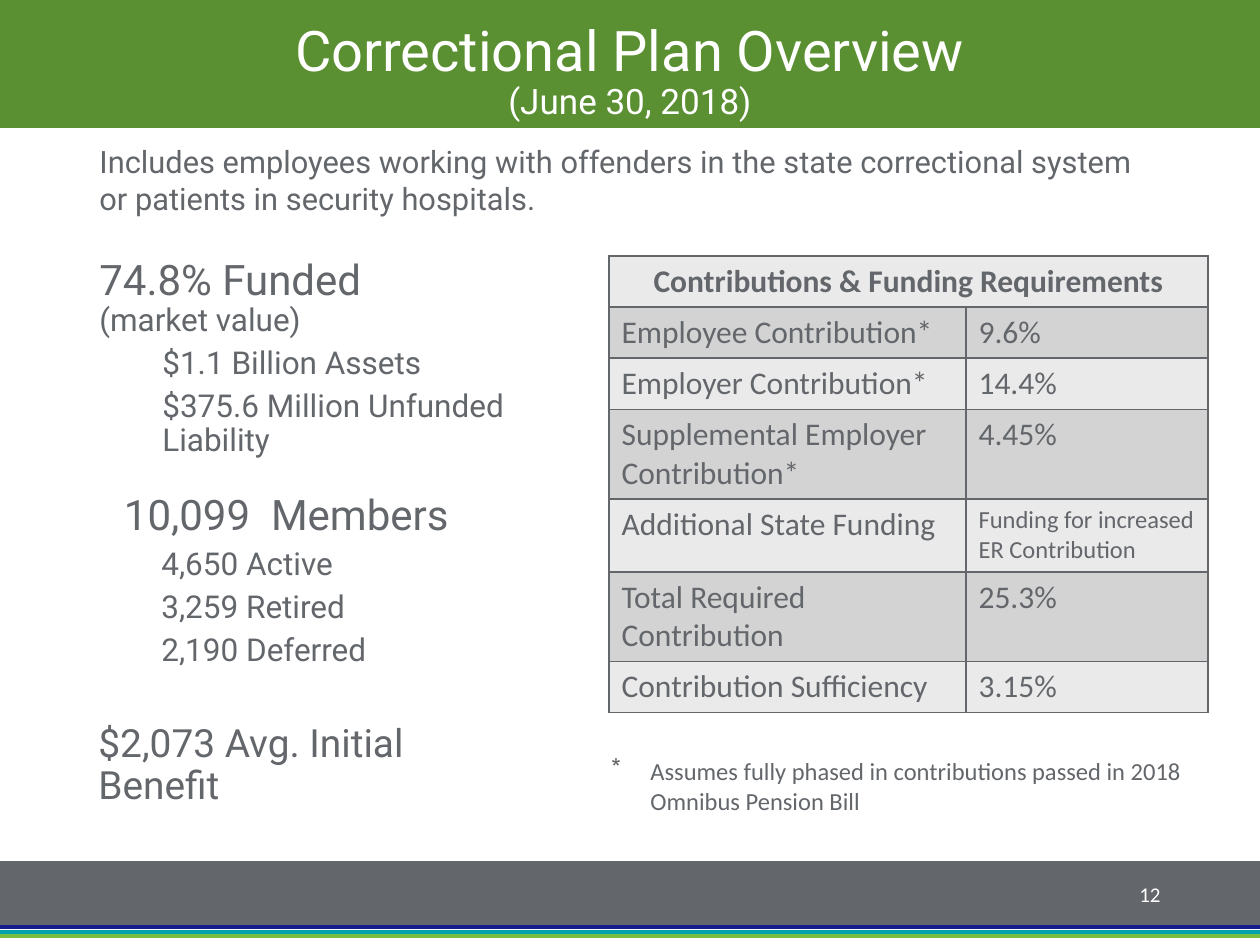
from lxml.etree import SubElement
from pptx import Presentation
from pptx.dml.color import RGBColor
from pptx.enum.shapes import MSO_CONNECTOR, MSO_SHAPE
from pptx.enum.text import MSO_ANCHOR, PP_ALIGN
from pptx.oxml import parse_xml
from pptx.oxml.ns import nsdecls, qn
from pptx.util import Emu, Pt

EMU_PER_PX = 914400 / 126
GRAY, WHITE, GREEN = "63666A", "FFFFFF", "5A8F32"
hex_color = RGBColor.from_string


def px(*lengths):
    """Turn pixel lengths into a list of EMU lengths."""
    return [Emu(round(length * EMU_PER_PX)) for length in lengths]


def write_text(shape, lines, font="Roboto", color=GRAY, align=None,
               anchor=MSO_ANCHOR.TOP, spacing=0.9):
    """Write (text, sizes of its runs, indent level, points before) lines."""
    frame = shape.text_frame
    frame.word_wrap = True
    frame.vertical_anchor = anchor
    frame.text = "\n".join(line[0] for line in lines)
    for paragraph, (_, sizes, level, before) in zip(frame.paragraphs, lines):
        paragraph.level = level
        paragraph.alignment = align
        paragraph.line_spacing = spacing
        paragraph.space_before = Pt(before)
        if level:
            properties = paragraph._p.get_or_add_pPr()
            properties.set("marL", str(px(63)[0]))
            properties.set("indent", "0")
        for run, size in zip(paragraph.runs, sizes):
            run.font.size = Pt(size)
            run.font.name = font
            run.font.color.rgb = hex_color(color)


presentation = Presentation()
presentation.slide_width, presentation.slide_height = px(1260, 945)
slide = presentation.slides.add_slide(presentation.slide_layouts[6])
shapes = slide.shapes

# Footer, stripe background and title band
for top, height, color in [(861, 84, GRAY), (927, 18, WHITE), (0, 128, GREEN)]:
    band = shapes.add_shape(MSO_SHAPE.RECTANGLE, *px(0, top, 1260, height))
    band.shadow.inherit = False
    band.fill.solid()
    band.fill.fore_color.rgb = hex_color(color)
    band.line.fill.background()
title = band
write_text(title, [("Correctional Plan Overview\v(June 30, 2018)", [32, 20], 0, 0)],
           color=WHITE, align=PP_ALIGN.CENTER, anchor=MSO_ANCHOR.BOTTOM)

for top, color in [(927, "171C8F"), (932, "00A3AD"), (936, "78BE43")]:
    stripe = shapes.add_connector(MSO_CONNECTOR.STRAIGHT, *px(0, top, 1260, top))
    stripe.line.color.rgb = hex_color(color)
    stripe.line.width = Pt(2.5)
    SubElement(stripe._element.spPr, qn("a:effectLst"))

# Contributions table
rows = [
    ("Contributions & Funding Requirements", "", 51),
    ("Employee Contribution*", "9.6%", 51),
    ("Employer Contribution*", "14.4%", 51),
    ("Supplemental Employer Contribution*", "4.45%", 89),
    ("Additional State Funding", "Funding for increased ER Contribution", 73),
    ("Total Required Contribution", "25.3%", 89),
    ("Contribution Sufficiency", "3.15%", 51),
]
table = shapes.add_table(len(rows), 2, *px(609, 256, 599, 455)).table
for column, width in zip(table.columns, px(357, 242)):
    column.width = width
for row_index, (*texts, height) in enumerate(rows):
    table.rows[row_index].height = px(height)[0]
    for column_index, text in enumerate(texts):
        cell = table.cell(row_index, column_index)
        for side in ("lnL", "lnR", "lnT", "lnB"):
            cell._tc.get_or_add_tcPr().append(parse_xml(
                f'<a:{side} {nsdecls("a")} w="12700"><a:solidFill>'
                f'<a:srgbClr val="{GRAY}"/></a:solidFill></a:{side}>'))
        cell.fill.solid()
        cell.fill.fore_color.rgb = hex_color("D3D3D4" if row_index % 2 else "EAEAEB")
        cell.text_frame.text = text
        paragraph = cell.text_frame.paragraphs[0]
        if row_index == 0:
            paragraph.alignment = PP_ALIGN.CENTER
        for run in paragraph.runs:
            run.font.size = Pt(14 if text.startswith("Funding") else 18)
            run.font.name = "Calibri"
            run.font.bold = row_index == 0
            run.font.color.rgb = hex_color(GRAY)
table.cell(0, 0).merge(table.cell(0, 1))

# Plan description and key figures
description = shapes.add_textbox(*px(87, 134, 1087, 89))
write_text(description, [
    ("Includes employees working with offenders in the state correctional system "
     "or patients in security hospitals.", [17.6], 0, 0),
], anchor=MSO_ANCHOR.BOTTOM, spacing=1.0)

funding = shapes.add_textbox(*px(87, 253, 438, 241))
write_text(funding, [
    ("74.8% Funded", [24], 0, 0),
    ("(market value)", [18], 0, 0),
    ("$1.1 Billion Assets", [18], 1, 5),
    ("$375.6 Million Unfunded Liability", [18], 1, 5),
])

members = shapes.add_textbox(*px(86, 488, 375, 231))
write_text(members, [
    ("10,099  Members", [24], 0, 0),
    ("4,650 Active", [18], 1, 5),
    ("3,259 Retired", [18], 1, 5),
    ("2,190 Deferred", [18], 1, 5),
])
members.text_frame.paragraphs[0].alignment = PP_ALIGN.RIGHT

benefit = shapes.add_textbox(*px(86, 718, 460, 63))
write_text(benefit, [("$2,073 Avg. Initial Benefit", [22.2], 0, 0)])

# Footnote and slide number
footnote = shapes.add_textbox(*px(599, 750, 599, 72))
write_text(footnote, [
    ("Assumes fully phased in contributions passed in 2018 Omnibus Pension Bill",
     [14], 0, 0),
], font="Calibri", spacing=1.0)
properties = footnote.text_frame.paragraphs[0]._p.get_or_add_pPr()
properties.set("marL", str(px(39)[0]))
properties.set("indent", str(px(-39)[0]))
SubElement(properties, qn("a:buChar")).set("char", "*")

slide_number = shapes.add_textbox(*px(890, 869, 283, 50))
write_text(slide_number, [("12", [12], 0, 0)], font="Calibri", color=WHITE,
           align=PP_ALIGN.RIGHT, anchor=MSO_ANCHOR.MIDDLE, spacing=1.0)

presentation.save("out.pptx")
